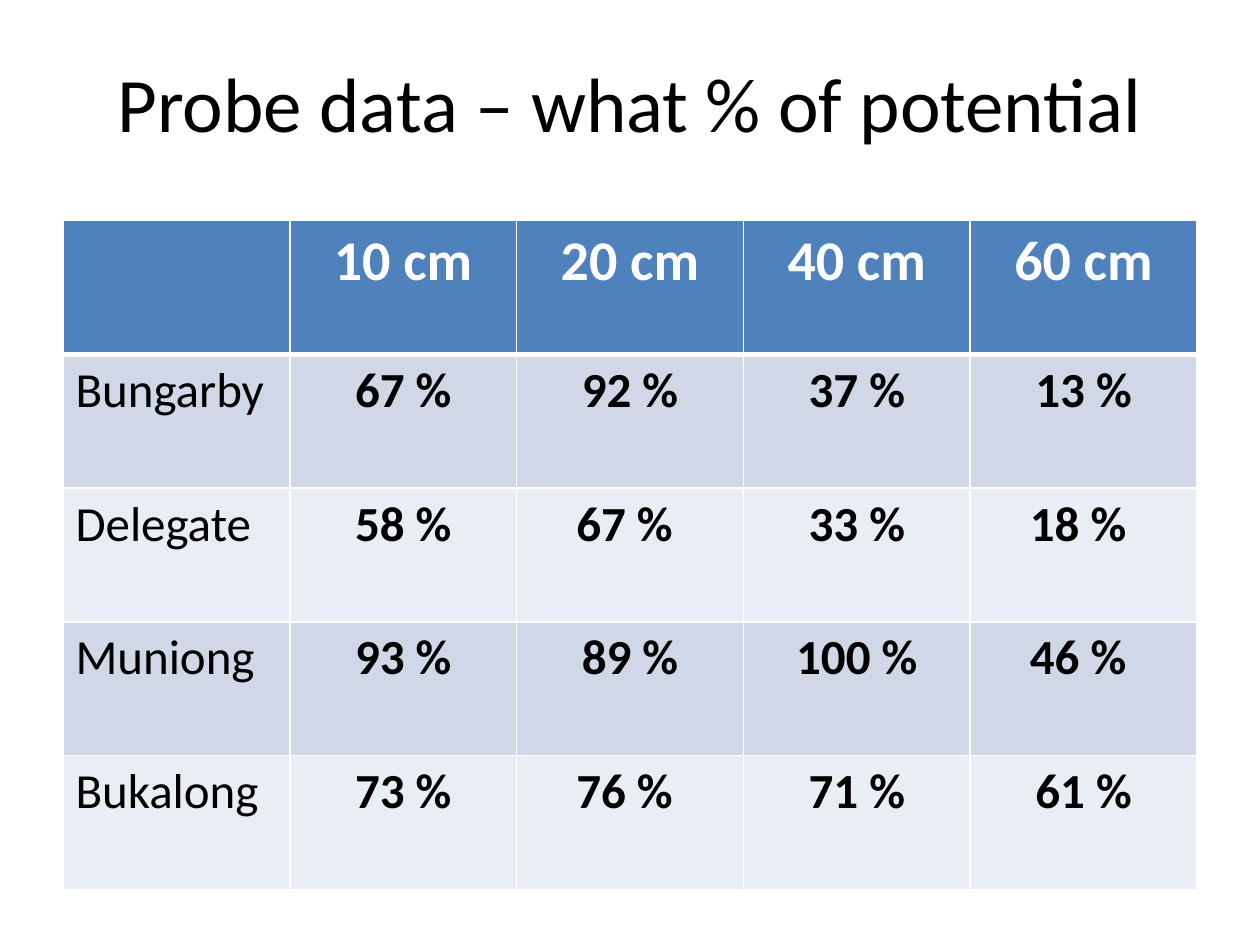
from dataclasses import dataclass

from lxml.etree import SubElement
from pptx import Presentation
from pptx.dml.color import RGBColor
from pptx.enum.text import MSO_ANCHOR, PP_ALIGN
from pptx.oxml.ns import qn
from pptx.util import Inches, Pt


@dataclass(frozen=True)
class Theme:
    font: str = "Calibri"
    text: str = "000000"
    header_text: str = "FFFFFF"
    header_fill: str = "4F81BD"
    band_fills: tuple = ("D0D8E8", "E9EDF4")
    border: str = "FFFFFF"
    title_size: int = 44
    header_size: int = 32
    body_size: int = 28


theme = Theme()


def add_text(paragraph, text, size, color, bold, align):
    paragraph.alignment = align
    run = paragraph.add_run()
    run.text = text
    run.font.name = theme.font
    run.font.size = Pt(size)
    run.font.bold = bold
    run.font.color.rgb = RGBColor.from_string(color)


def add_borders(cell, **widths):
    properties = cell._tc.get_or_add_tcPr()
    for side in "LRTB":
        line = SubElement(properties, qn(f"a:ln{side}"), w=str(Pt(widths.get(side, 1))))
        fill = SubElement(line, qn("a:solidFill"))
        SubElement(fill, qn("a:srgbClr"), val=theme.border)


presentation = Presentation()
presentation.slide_width = Inches(10)
presentation.slide_height = Inches(7.5)
slide = presentation.slides.add_slide(presentation.slide_layouts[5])

# Title
title = slide.shapes.title
title.left, title.top = Inches(0.5), Inches(0.3)
title.width, title.height = Inches(9), Inches(1.01)
title.text_frame.vertical_anchor = MSO_ANCHOR.MIDDLE
add_text(title.text_frame.paragraphs[0], "Probe data – what % of potential",
         theme.title_size, theme.text, False, PP_ALIGN.CENTER)

# Share of potential by site and probe depth
probe_rows = [
    ["", "10 cm", "20 cm", "40 cm", "60 cm"],
    ["Bungarby", "67 %", "92 %", "37 %", "13 %"],
    ["Delegate", "58 %", "67 % ", "33 %", "18 % "],
    ["Muniong", "93 %", "89 %", "100 %", "46 % "],
    ["Bukalong", "73 %", "76 % ", "71 %", "61 %"],
]
probe_table = slide.shapes.add_table(
    len(probe_rows), len(probe_rows[0]),
    Inches(0.5), Inches(1.75), Inches(9), Inches(5.31)).table

for row, values in enumerate(probe_rows):
    is_header = row == 0
    if is_header:
        fill, color, size = theme.header_fill, theme.header_text, theme.header_size
    else:
        fill, color, size = theme.band_fills[(row - 1) % 2], theme.text, theme.body_size

    for column, value in enumerate(values):
        cell = probe_table.cell(row, column)
        # A heavier rule separates the header from the sites
        add_borders(cell, T=3 if row == 1 else 1, B=3 if is_header else 1)
        cell.fill.solid()
        cell.fill.fore_color.rgb = RGBColor.from_string(fill)
        if value:
            is_site = column == 0
            add_text(cell.text_frame.paragraphs[0], value, size, color, not is_site,
                     PP_ALIGN.LEFT if is_site else PP_ALIGN.CENTER)

presentation.save("out.pptx")
